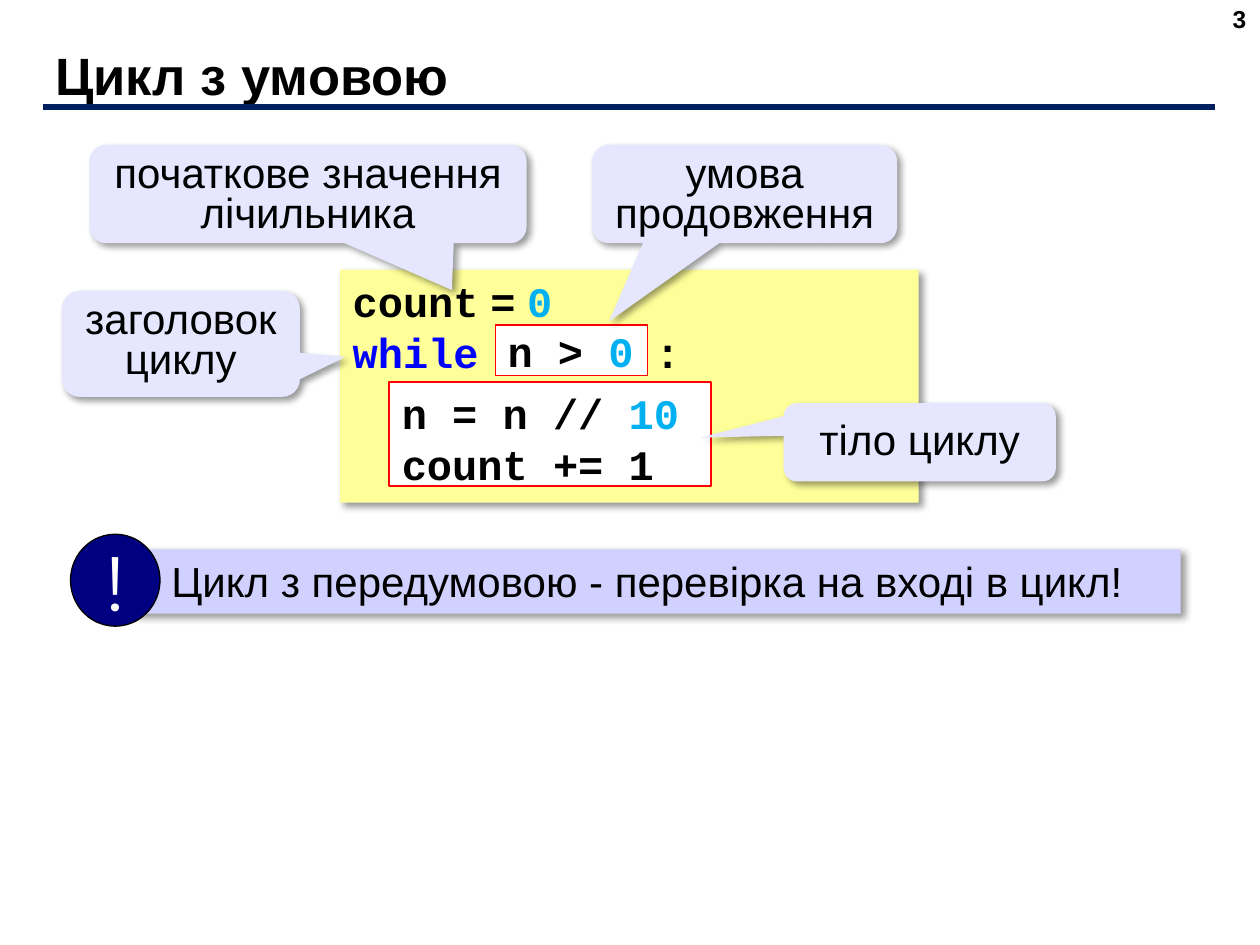
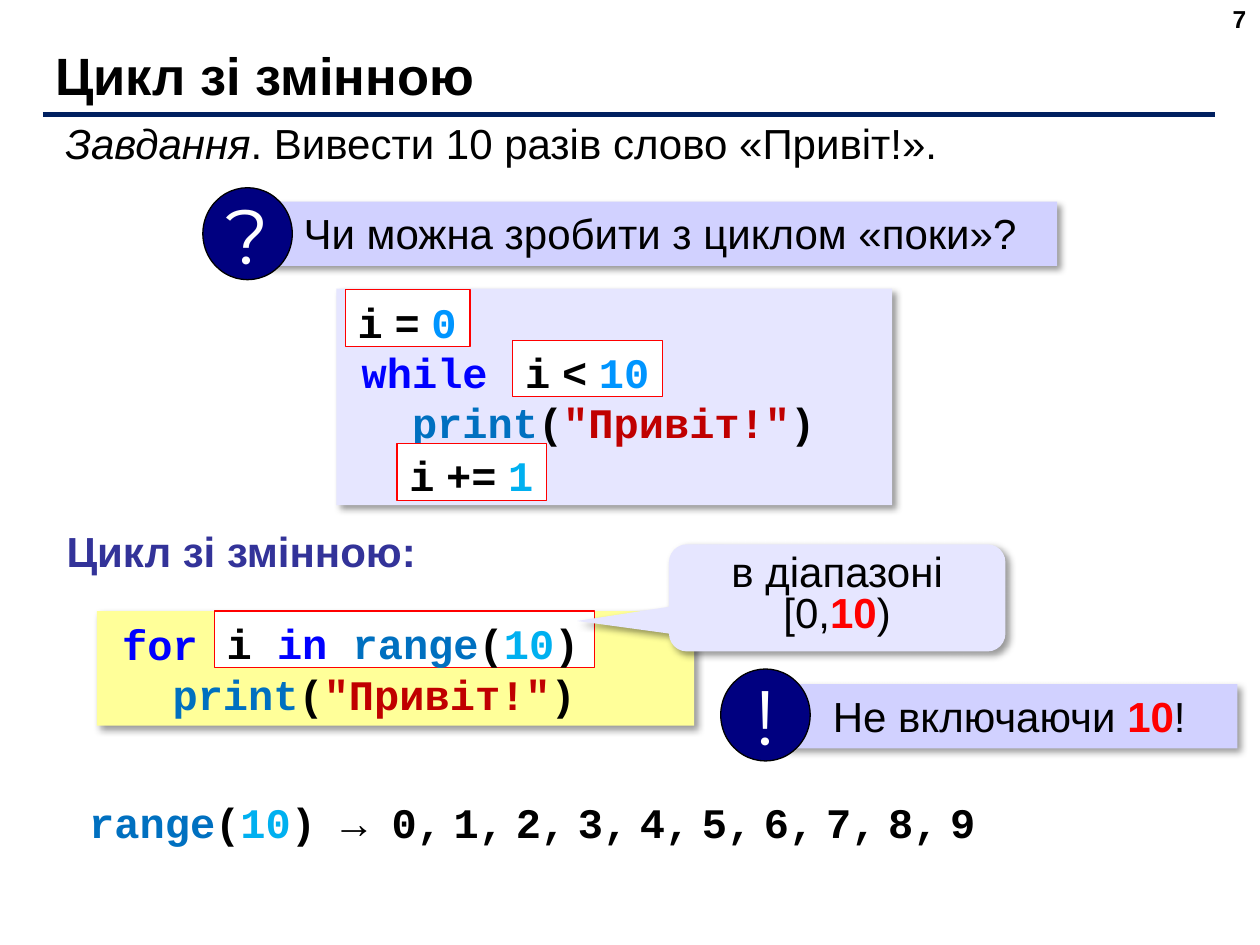
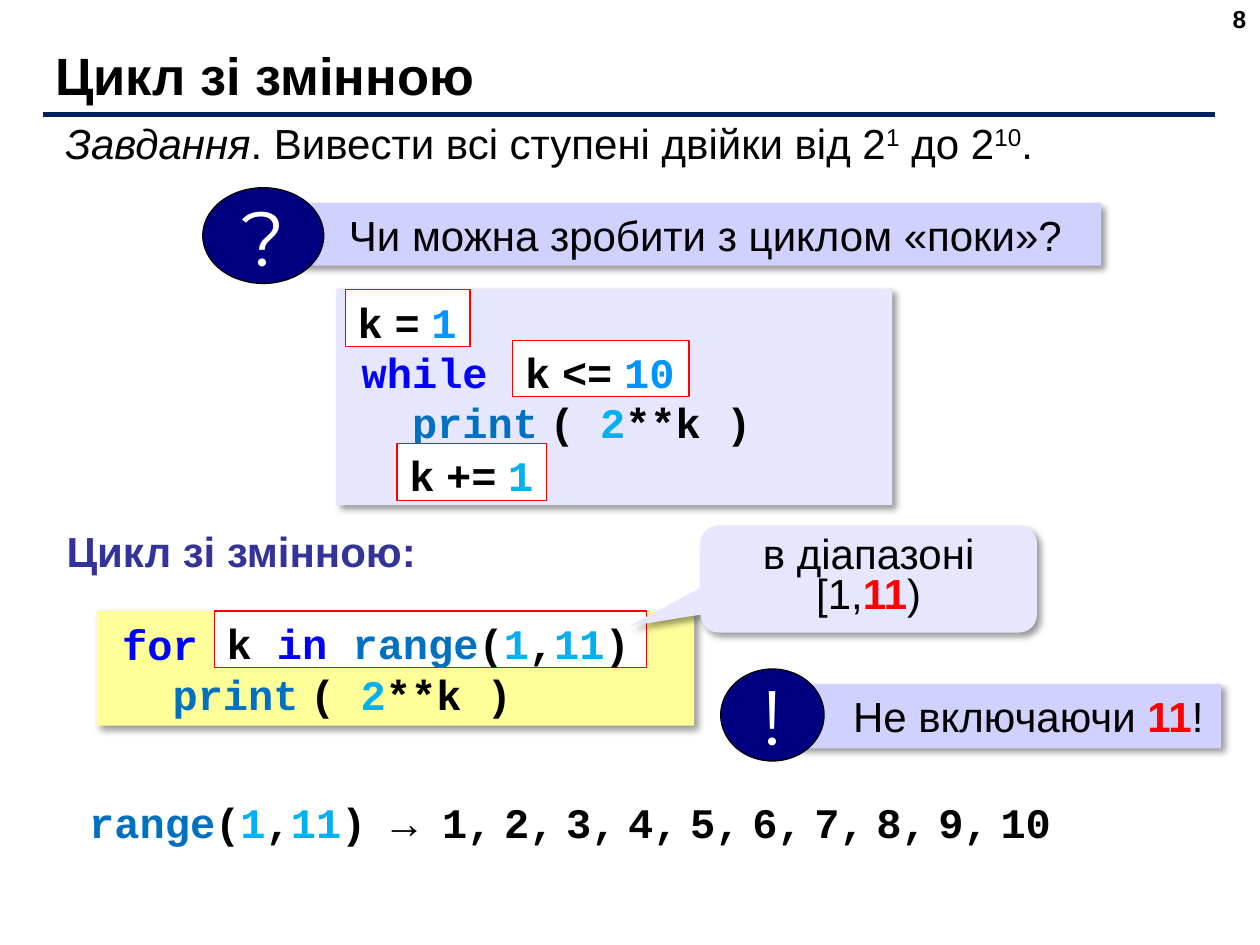
import pptx
import pptx.util
import pptx.dml.color
import pptx.enum.shapes
import pptx.enum.text
import pptx.oxml
import pptx.oxml.ns

Inches, Pt = pptx.util.Inches, pptx.util.Pt
SHAPE = pptx.enum.shapes.MSO_SHAPE
ALIGN = pptx.enum.text.PP_ALIGN
ANCHOR = pptx.enum.text.MSO_ANCHOR

# Shared colours
BLACK, WHITE, RED = "000000", "FFFFFF", "FF0000"
KEYWORD, BUILTIN, STRING = "0000FF", "0070C0", "C00000"
NUMBER, START_NUMBER = "00B0F0", "0095FF"
YELLOW, LAVENDER, BAND, NAVY = "FFFF99", "E6E6FF", "D1D1FF", "000080"
RULE, HEADING = "002060", "333399"

# Shared text formats
BODY = {"name": "Arial", "size": Pt(24), "bold": False}
CODE = {"name": "Courier New", "size": Pt(24), "bold": True}
TITLE = {"name": "Arial", "size": Pt(30), "bold": True}
PAGE_NUMBER = {"name": "Arial", "size": Pt(14), "bold": True}
BADGE = {"name": "Montserrat", "size": Pt(44), "bold": False}
CODE_COLUMN = 0.2  # width of one code character, inches
THIN_SPACE = "_"  # in code spans: a space set in the narrower body font


def rgb(value):
    return pptx.dml.color.RGBColor.from_string(value)


def drawing_xml(text):
    return pptx.oxml.parse_xml(text.replace(">", " " + pptx.oxml.ns.nsdecls("a") + ">", 1))


def add_span(para, text, style, color=BLACK, **extra):
    span = para.add_run()
    span.text = text
    baseline = extra.pop("baseline", None)
    for name, value in {**style, **extra}.items():
        setattr(span.font, name, value)
    span.font.color.rgb = rgb(color)
    if baseline:
        span.font._element.set("baseline", str(baseline))


def add_code_span(para, text, color=BLACK):
    for index, part in enumerate(text.split(THIN_SPACE)):
        if index:
            add_span(para, " ", {**CODE, "name": "Arial"}, color)
        if part:
            add_span(para, part, CODE, color)


def set_frame(box, margins=(0.1, 0.05, 0.1, 0.05), wrap=True, anchor=ANCHOR.TOP):
    frame = box.text_frame
    sides = ("margin_left", "margin_top", "margin_right", "margin_bottom")
    formats = dict(zip(sides, map(Inches, margins)))
    formats.update(word_wrap=wrap, vertical_anchor=anchor,
                   auto_size=pptx.enum.text.MSO_AUTO_SIZE.NONE)
    for name, value in formats.items():
        setattr(frame, name, value)
    return frame


def write(box, spans, style=BODY, align=ALIGN.LEFT, spacing=None, **frame_format):
    para = set_frame(box, **frame_format).paragraphs[0]
    para.alignment = align
    if spacing:
        para.line_spacing = spacing
    for text, color, *extra in spans:
        add_span(para, text, style, color, **(extra[0] if extra else {}))


def write_code(box, lines, indents=(), tab_column=None, **frame_format):
    """Each line is a list of (text, colour); indents and the tab are in characters."""
    frame = set_frame(box, **frame_format)
    for index, line in enumerate(lines):
        para = frame.paragraphs[0] if index == 0 else frame.add_paragraph()
        para.alignment = ALIGN.LEFT
        properties = para._p.get_or_add_pPr()
        if index < len(indents):
            properties.set("marL", str(Inches(indents[index] * CODE_COLUMN)))
            properties.set("indent", "0")
        if any("\t" in text for text, color in line):
            position = Inches(tab_column * CODE_COLUMN)
            properties.append(drawing_xml(
                f'<a:tabLst><a:tab pos="{position}" algn="l"/></a:tabLst>'))
        for text, color in line:
            add_code_span(para, text, color)


def add_box(shapes, kind, place, fill, line=None, width=0.75, shadow=False):
    box = shapes.add_shape(kind, *map(Inches, place))
    box.shadow.inherit = False
    box.fill.solid()
    box.fill.fore_color.rgb = rgb(fill)
    if line:
        box.line.color.rgb = rgb(line)
        box.line.width = Pt(width)
    else:
        box.line.fill.background()
    if shadow:
        effects = box._element.spPr.find(pptx.oxml.ns.qn("a:effectLst"))
        effects.append(drawing_xml(
            f'<a:outerShdw blurRad="{Pt(4)}" dist="{Pt(3)}" dir="2700000" algn="tl" '
            'rotWithShape="0"><a:srgbClr val="000000"><a:alpha val="40000"/>'
            '</a:srgbClr></a:outerShdw>'))
    return box


def add_label(page, place, spans, style=BODY, **formats):
    box = page.shapes.add_textbox(*map(Inches, place))
    write(box, spans, style, **formats)


def add_code_box(page, place, fill, lines, **formats):
    box = add_box(page.shapes, SHAPE.RECTANGLE, place, fill, shadow=True)
    write_code(box, lines, **formats)


def add_code_part(page, place, line, top_margin=0.05):
    box = add_box(page.shapes, SHAPE.RECTANGLE, place, WHITE, RED)
    write_code(box, [line], margins=(0.1, top_margin, 0.1, 0), wrap=False)


def add_callout(page, place, tip, spans, spacing=0.8):
    box = add_box(page.shapes, SHAPE.ROUNDED_RECTANGULAR_CALLOUT, place, LAVENDER, shadow=True)
    for index, value in enumerate((*tip, 0.167)):
        box.adjustments[index] = value
    write(box, spans, align=ALIGN.CENTER, spacing=spacing)


def add_note(page, mark, badge_place, band_place, spans, text_left):
    """A band with a round badge over its left end."""
    group = page.shapes.add_group_shape()
    band = add_box(group.shapes, SHAPE.RECTANGLE, band_place, BAND, shadow=True)
    write(band, spans, margins=(text_left, 0.05, 0, 0.05))
    badge = add_box(group.shapes, SHAPE.OVAL, badge_place, NAVY, BLACK)
    write(badge, [(mark, WHITE)], BADGE, ALIGN.CENTER, wrap=False, anchor=ANCHOR.MIDDLE)


def add_page(deck, title, number, rule_top):
    page = deck.slides.add_slide(deck.slide_layouts[5])
    heading = page.shapes.title
    place = dict(left=0.34, top=0.33, width=9.16, height=0.52)
    for name, value in place.items():
        setattr(heading, name, Inches(value))
    write(heading, [(title, BLACK)], TITLE, anchor=ANCHOR.MIDDLE)
    add_label(page, (7.66, -0.02, 2.33, 0.52), [(number, BLACK)], PAGE_NUMBER, align=ALIGN.RIGHT)
    rule = page.shapes.add_connector(
        pptx.enum.shapes.MSO_CONNECTOR.STRAIGHT,
        Inches(0.34), Inches(rule_top), Inches(9.64), Inches(rule_top))
    rule.line.color.rgb = rgb(RULE)
    rule.line.width = Pt(3)
    rule._element.spPr.append(drawing_xml("<a:effectLst></a:effectLst>"))
    return page


def build_while_page(deck):
    page = add_page(deck, "Цикл з умовою", "3", 0.85)
    add_code_box(page, (2.7, 2.14, 4.59, 1.85), YELLOW, [
        [("count_=_", BLACK), ("0", NUMBER)],
        [("while", KEYWORD), ("\t:", BLACK)],
    ], tab_column=12)

    # Loop body and condition
    body = add_box(page.shapes, SHAPE.FLOWCHART_PROCESS, (3.09, 3.03, 2.55, 0.83), WHITE, RED, 1)
    write_code(body, [[("n = n // ", BLACK), ("10", NUMBER)], [("count += 1", BLACK)]])
    add_code_part(page, (3.93, 2.58, 1.21, 0.4), [("n > ", BLACK), ("0", NUMBER)], top_margin=0)

    # Callouts
    for place, tip, text, spacing in (
            ((6.22, 3.2, 2.16, 0.62), (-0.806, -0.059), "тіло циклу", None),
            ((0.71, 1.15, 3.47, 0.78), (0.329, 0.977), "початкове значення лічильника", 0.8),
            ((4.7, 1.15, 2.42, 0.78), (-0.445, 1.296), "умова продовження", 0.8),
            ((0.49, 2.31, 1.89, 0.84), (0.69, 0.124), "заголовок циклу", 0.8)):
        add_callout(page, place, tip, [(text, BLACK)], spacing)

    add_note(page, "!", (0.56, 4.24, 0.71, 0.73), (1.07, 4.36, 8.3, 0.51),
             [("Цикл з передумовою - перевірка на вході в цикл!", BLACK)], 0.29)


def build_for_page(deck, number, task, name, start, compare, limit, print_line,
                   widths, tabs, question, callout, warning):
    """Compare the while loop with the for loop that does the same."""
    page = add_page(deck, "Цикл зі змінною", number, 0.91)
    add_label(page, (0.42, 0.88, 9.27, 0.51), [("Завдання", BLACK, {"italic": True}), *task])
    add_note(page, "?", *question[:2],
             [("Чи можна зробити з циклом «поки»?", BLACK)], question[2])

    # While loop
    code_format = dict(margins=(0.2, 0.05, 0.1, 0.05), anchor=ANCHOR.MIDDLE, indents=(0, 2))
    add_code_box(page, (2.67, 2.29, 4.41, 1.72), LAVENDER,
                 [[("while", KEYWORD), ("\t:", BLACK)], print_line],
                 tab_column=tabs[0], **code_format)
    add_code_part(page, (2.74, 2.3, 0.99, 0.45),
                  [(f"{name}_=_", BLACK), (start, START_NUMBER)])
    add_code_part(page, (4.07, 2.7, widths[0], 0.45),
                  [(f"{name}_{compare}_", BLACK), ("10", START_NUMBER)])
    add_code_part(page, (3.15, 3.52, 1.19, 0.45), [(f"{name}_+=_", BLACK), ("1", NUMBER)])

    # For loop
    arguments = [(limit, NUMBER)]
    if start != "0":
        arguments = [(start, NUMBER), (",", BLACK)] + arguments
    call = [("range", BUILTIN), ("(", BLACK), *arguments]
    add_code_box(page, (0.77, 4.85, 4.74, 0.91), YELLOW,
                 [[("for", KEYWORD), ("\t:", BLACK)], print_line],
                 tab_column=tabs[1], **code_format)
    add_code_part(page, (1.7, 4.85, widths[1], 0.45),
                  [(f"{name} ", BLACK), ("in ", KEYWORD), *call, (")", BLACK)])
    bold_limit = (limit, RED, {"bold": True})
    add_callout(page, *callout,
                [(f"в діапазоні [{start},", BLACK), bold_limit, (")", BLACK)])
    add_label(page, (0.43, 4.12, 3, 0.5), [("Цикл зі змінною:", HEADING, {"bold": True})],
              wrap=False)
    add_note(page, "!", *warning[:2],
             [("Не включаючи ", BLACK), bold_limit, ("!", BLACK)], warning[2])

    # Values of the range
    values = ",_".join(str(value) for value in range(int(start), int(limit)))
    box = page.shapes.add_textbox(*map(Inches, (0.61, 6.27, widths[2], 0.51)))
    write_code(box, [call + [(f") → {values}", BLACK)]], wrap=False)


def main():
    deck = pptx.Presentation()
    deck.slide_width, deck.slide_height = Inches(10), Inches(7.5)
    build_while_page(deck)
    build_for_page(
        deck, "7", [(". Вивести 10 разів слово «Привіт!».", BLACK)],
        name="i", start="0", compare="<", limit="10",
        print_line=[("print", BUILTIN), ("(", BLACK), ('"Привіт!"', STRING), (")", BLACK)],
        widths=(1.19, 3.02, 7.42), tabs=(12, 19),
        question=((1.61, 1.49, 0.71, 0.73), (2.12, 1.6, 6.27, 0.51), 0.29),
        callout=((5.31, 4.32, 2.67, 0.85), (-0.773, 0.216)),
        warning=((5.72, 5.31, 0.71, 0.73), (6.23, 5.43, 3.59, 0.51), 0.38))
    power = {"baseline": 30000}
    build_for_page(
        deck, "8", [(". Вивести всі ступені двійки від 2", BLACK), ("1", BLACK, power),
                    (" до 2", BLACK), ("10", BLACK, power), (".", BLACK)],
        name="k", start="1", compare="<=", limit="11",
        print_line=[("print_", BUILTIN), ("( ", BLACK), ("2", NUMBER), ("**k )", BLACK)],
        widths=(1.4, 3.43, 8.13), tabs=(13, 21),
        question=((1.61, 1.49, 0.96, 0.76), (2.3, 1.61, 6.44, 0.5), 0.47),
        callout=((5.56, 4.17, 2.67, 0.85), (-0.711, 0.439)),
        warning=((5.72, 5.31, 0.82, 0.73), (6.3, 5.43, 3.39, 0.51), 0.47))
    deck.save("out.pptx")


if __name__ == "__main__":
    main()
